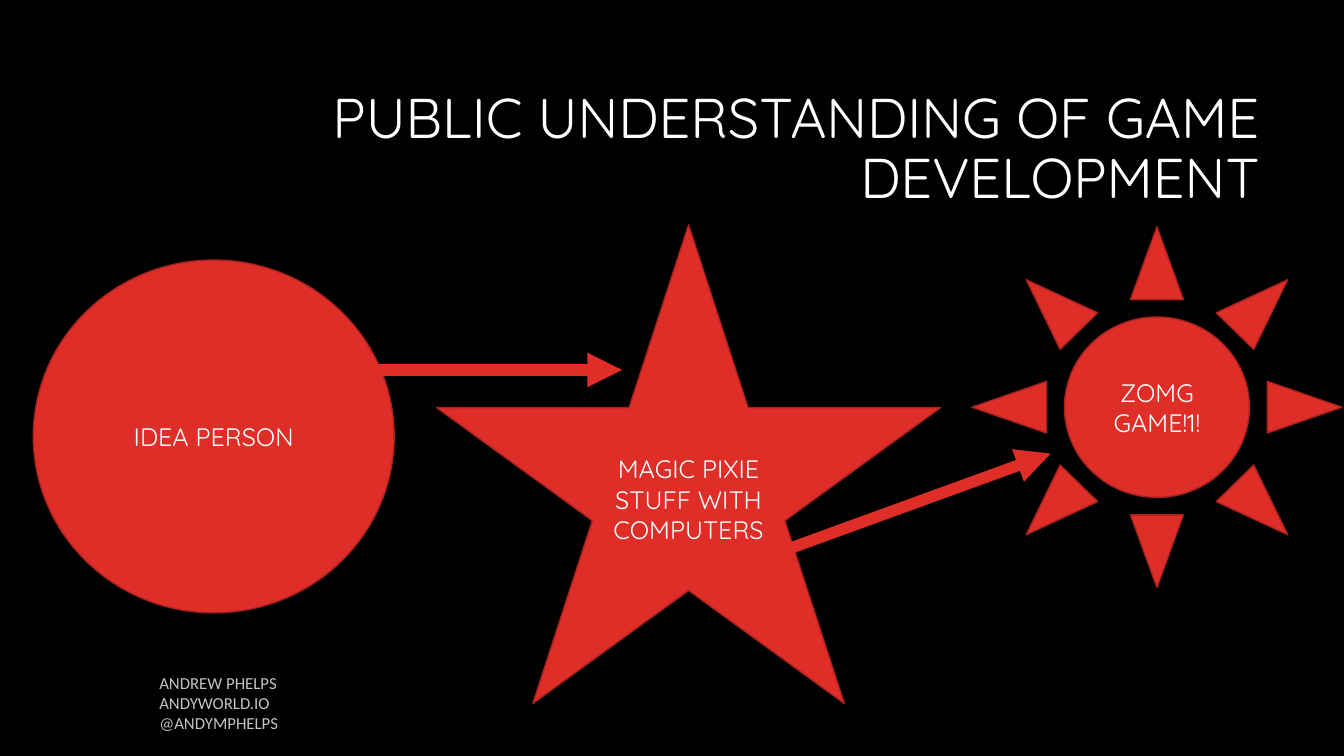
from lxml import etree
from pptx import Presentation
from pptx.dml.color import RGBColor
from pptx.enum import shapes, text
from pptx.oxml import ns
from pptx.util import Inches, Pt

COLORS = {
    "background": "000000",
    "text": "FFFFFF",
    "credit": "C4C4C4",
    "red": "DF2E28",
    "outline": "A5221E",
}


def rgb(name):
    return RGBColor.from_string(COLORS[name])


def write(tf, content, size=18, font="Quicksand", color="text",
          align=text.PP_ALIGN.CENTER, anchor=text.MSO_ANCHOR.MIDDLE, spacing=None):
    tf.word_wrap = True
    tf.auto_size = text.MSO_AUTO_SIZE.NONE
    tf.vertical_anchor = anchor
    for i, line in enumerate(content.split("\n")):
        p = tf.add_paragraph() if i else tf.paragraphs[0]
        p.alignment = align
        if spacing:
            p.line_spacing = spacing
        r = p.add_run()
        r.text = line
        r.font.size = Pt(size)
        r.font.name = font
        r.font.color.rgb = rgb(color)


class Deck:
    def __init__(self):
        self.prs = Presentation()
        self.prs.slide_width = Inches(13.33)
        self.prs.slide_height = Inches(7.5)
        self.slide = self.prs.slides.add_slide(self.prs.slide_layouts[5])
        fill = self.slide.background.fill
        fill.solid()
        fill.fore_color.rgb = rgb("background")

    def title(self, content, left, top, width, height):
        sp = self.slide.shapes.title
        sp.left, sp.top = Inches(left), Inches(top)
        sp.width, sp.height = Inches(width), Inches(height)
        write(sp.text_frame, content, size=40, align=text.PP_ALIGN.RIGHT,
              anchor=text.MSO_ANCHOR.TOP, spacing=0.9)

    def credit(self, content, left, top, width, height):
        sp = self.slide.shapes.add_textbox(*map(Inches, (left, top, width, height)))
        tf = sp.text_frame
        tf.margin_left = tf.margin_top = tf.margin_right = tf.margin_bottom = 0
        write(tf, content, size=12, font="Calibri", color="credit",
              align=text.PP_ALIGN.LEFT, anchor=text.MSO_ANCHOR.TOP)

    def stage(self, kind, content, left, top, width, height):
        sp = self.slide.shapes.add_shape(kind, *map(Inches, (left, top, width, height)))
        sp.shadow.inherit = False
        sp.fill.solid()
        sp.fill.fore_color.rgb = rgb("red")
        sp.line.color.rgb = rgb("outline")
        sp.line.width = Pt(1)
        write(sp.text_frame, content)

    def arrow(self, x1, y1, x2, y2):
        line = self.slide.shapes.add_connector(
            shapes.MSO_CONNECTOR.STRAIGHT, *map(Inches, (x1, y1, x2, y2)))
        line.line.color.rgb = rgb("red")
        line.line.width = Pt(8.25)
        etree.SubElement(line.line._get_or_add_ln(), ns.qn("a:tailEnd"), type="triangle")
        etree.SubElement(line._element.spPr, ns.qn("a:effectLst"))


def main():
    deck = Deck()
    deck.credit("ANDREW PHELPS\nANDYWORLD.IO\n@ANDYMPHELPS", 1.58, 6.67, 7.25, 0.5)
    deck.title("PUBLIC UNDERSTANDING OF GAME DEVELOPMENT", 3.17, 0.84, 9.42, 1.41)
    kinds = shapes.MSO_SHAPE
    deck.stage(kinds.OVAL, "IDEA PERSON", 0.33, 2.58, 3.58, 3.5)
    deck.stage(kinds.STAR_5_POINT, "MAGIC PIXIE STUFF WITH COMPUTERS", 4.33, 2.23, 5, 4.75)
    deck.stage(kinds.SUN, "ZOMG GAME!1!", 9.64, 2.25, 3.67, 3.58)
    deck.arrow(3.58, 3.67, 6.17, 3.67)
    deck.arrow(7.67, 5.5, 10.42, 4.5)
    deck.prs.save("out.pptx")


if __name__ == "__main__":
    main()
